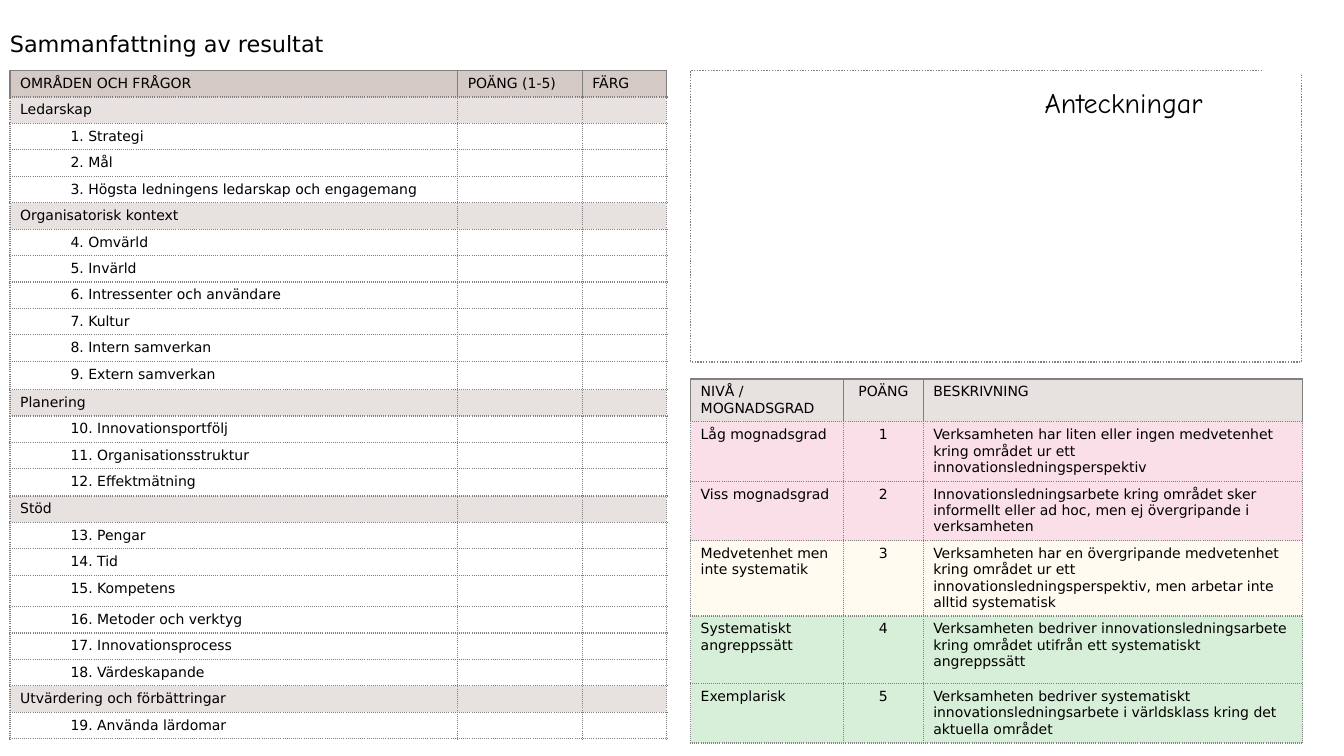
import dataclasses

import lxml.etree
import pptx
import pptx.dml.color
import pptx.enum.dml
import pptx.enum.shapes
import pptx.enum.text
import pptx.oxml.ns
import pptx.util

GRID_COLUMNS, GRID_ROWS = 133.3, 75
CELL = pptx.util.Inches(0.1)


@dataclasses.dataclass(frozen=True)
class Theme:
    text: str = "000000"
    paper: str = "FFFFFF"
    line: str = "808080"
    header: str = "D4C9C5"
    section: str = "E7E1DF"
    low: str = "FBDFE8"
    middle: str = "FFFBF0"
    high: str = "D7EFD8"
    body_font: str = "DejaVu Sans"
    note_font: str = "Comic Neue"
    body_size: int = 10
    title_size: int = 16
    note_size: int = 20
    line_width: int = 1


@dataclasses.dataclass(frozen=True)
class Box:
    left: float
    top: float
    width: float
    height: float

    def inside(self, left, top, width, height):
        return Box(self.left + left, self.top + top, width, height)

    def lengths(self):
        return [grid(value) for value in (self.left, self.top, self.width, self.height)]


THEME = Theme()

AREAS = [
    ("Ledarskap", ["Strategi", "Mål", "Högsta ledningens ledarskap och engagemang"]),
    ("Organisatorisk kontext", ["Omvärld", "Invärld", "Intressenter och användare",
                                "Kultur", "Intern samverkan", "Extern samverkan"]),
    ("Planering", ["Innovationsportfölj", "Organisationsstruktur", "Effektmätning"]),
    ("Stöd", ["Pengar", "Tid", "Kompetens", "Metoder och verktyg",
              "Innovationsprocess", "Värdeskapande"]),
    ("Utvärdering och förbättringar", ["Använda lärdomar"]),
]
QUESTION_HEIGHTS = {9: 2.8, 12: 2.7, 15: 3.1}

LEVELS = [
    ("Låg mognadsgrad", "Verksamheten har liten eller ingen medvetenhet kring området "
     "ur ett innovationsledningsperspektiv", THEME.low, 5.9),
    ("Viss mognadsgrad", "Innovationsledningsarbete kring området sker informellt "
     "eller ad hoc, men ej övergripande i verksamheten", THEME.low, 5.9),
    ("Medvetenhet men inte systematik", "Verksamheten har en övergripande medvetenhet "
     "kring området ur ett innovationsledningsperspektiv, men arbetar inte alltid "
     "systematisk", THEME.middle, 7.4),
    ("Systematiskt angreppssätt", "Verksamheten bedriver innovationsledningsarbete kring "
     "området utifrån ett systematiskt angreppssätt", THEME.high, 6.7),
    ("Exemplarisk", "Verksamheten bedriver systematiskt innovationsledningsarbete "
     "i världsklass kring det aktuella området", THEME.high, 5.9),
]


def grid(count):
    return round(count * CELL)


def color(value):
    return pptx.dml.color.RGBColor.from_string(value)


def style_text(paragraph, size, name=THEME.body_font):
    paragraph.font.size = pptx.util.Pt(size)
    paragraph.font.name = name
    paragraph.font.color.rgb = color(THEME.text)


def add_borders(cell, bottom_dash, other_dash):
    properties = cell._tc.get_or_add_tcPr()
    for side in "LRTB":
        line = lxml.etree.SubElement(properties, pptx.oxml.ns.qn(f"a:ln{side}"),
                                     w=str(pptx.util.Pt(THEME.line_width)))
        solid = lxml.etree.SubElement(line, pptx.oxml.ns.qn("a:solidFill"))
        lxml.etree.SubElement(solid, pptx.oxml.ns.qn("a:srgbClr"), val=THEME.line)
        dash = bottom_dash if side == "B" else other_dash
        lxml.etree.SubElement(line, pptx.oxml.ns.qn("a:prstDash"), val=dash)


def fill_cell(cell, text, fill, is_header):
    dash = "solid" if is_header else "sysDot"
    add_borders(cell, dash, dash)
    if fill:
        cell.fill.solid()
        cell.fill.fore_color.rgb = color(fill)
    else:
        cell.fill.background()
    paragraph = cell.text_frame.paragraphs[0]
    style_text(paragraph, THEME.body_size)
    if text:
        paragraph.add_run().text = text
    else:
        lxml.etree.SubElement(paragraph._p, pptx.oxml.ns.qn("a:endParaRPr"),
                              sz=str(THEME.body_size * 100))
    return paragraph


def add_grid_table(slide, box, shares, rows):
    table = slide.shapes.add_table(len(rows), len(shares), *box.lengths()).table
    table.first_row = table.horz_banding = False
    for column, share in zip(table.columns, shares):
        column.width = grid(box.width * share)
    for index, (texts, fill, height) in enumerate(rows):
        table.rows[index].height = grid(height)
        for cell, text in zip(table.rows[index].cells, texts):
            fill_cell(cell, text, fill, index == 0)
    return table


def add_label(slide, box, text, size, name=THEME.body_font):
    frame = slide.shapes.add_textbox(*box.lengths()).text_frame
    frame.word_wrap = True
    paragraph = frame.paragraphs[0]
    paragraph.text = text
    style_text(paragraph, size, name)
    return frame


def add_panel(slide, box):
    shape = slide.shapes.add_shape(pptx.enum.shapes.MSO_SHAPE.RECTANGLE, *box.lengths())
    shape.shadow.inherit = False
    shape.fill.solid()
    shape.fill.fore_color.rgb = color(THEME.paper)
    shape.line.fill.background()
    return shape


def add_questions(slide, box):
    rows = [(("OMRÅDEN OCH FRÅGOR", "POÄNG (1-5)", "FÄRG"), THEME.header, 2.6)]
    question_rows = []
    number = 0
    for area, questions in AREAS:
        rows.append(((area, "", ""), THEME.section, 2.6))
        for question in questions:
            number += 1
            question_rows.append(len(rows))
            rows.append(((f"{number}. {question}", "", ""), None,
                         QUESTION_HEIGHTS.get(number, 2.6)))
    table = add_grid_table(slide, box, (0.682, 0.19, 0.128), rows)
    for index in question_rows:
        paragraph = table.cell(index, 0).text_frame.paragraphs[0]
        paragraph.level = 1
        paragraph._p.get_or_add_pPr().set("marL", str(grid(5)))


def add_levels(slide, box):
    rows = [(("NIVÅ / MOGNADSGRAD", "POÄNG", "BESKRIVNING"), THEME.section, 4.2)]
    for score, (level, description, fill, height) in enumerate(LEVELS, 1):
        rows.append(((level, str(score), description), fill, height))
    table = add_grid_table(slide, box, (0.25, 0.13, 0.62), rows)
    for row in table.rows:
        row.cells[1].text_frame.paragraphs[0].alignment = pptx.enum.text.PP_ALIGN.CENTER


def add_notes_area(slide, box):
    panel = add_panel(slide, box)
    panel.line.color.rgb = color(THEME.line)
    panel.line.width = pptx.util.Pt(THEME.line_width)
    panel.line.dash_style = pptx.enum.dml.MSO_LINE.ROUND_DOT
    frame = add_label(slide, box.inside(35.1, 0.5, 21.8, 3), "Anteckningar",
                      THEME.note_size, THEME.note_font)
    frame.margin_left = frame.margin_top = frame.margin_right = frame.margin_bottom = 0
    frame.paragraphs[0].line_spacing = 1.3
    add_panel(slide, box.inside(56.8, -2.6, 5.6, 3))


def main():
    presentation = pptx.Presentation()
    presentation.slide_width = grid(GRID_COLUMNS)
    presentation.slide_height = grid(GRID_ROWS)
    slide = presentation.slides.add_slide(presentation.slide_layouts[6])
    add_questions(slide, Box(1, 7, 65.1, 66.3))
    add_levels(slide, Box(68.5, 37.6, 60.7, 36))
    add_label(slide, Box(0, 2.5, 66.7, 3.7), "Sammanfattning av resultat", THEME.title_size)
    add_notes_area(slide, Box(68.5, 7, 60.6, 28.9))
    presentation.save("out.pptx")


if __name__ == "__main__":
    main()
